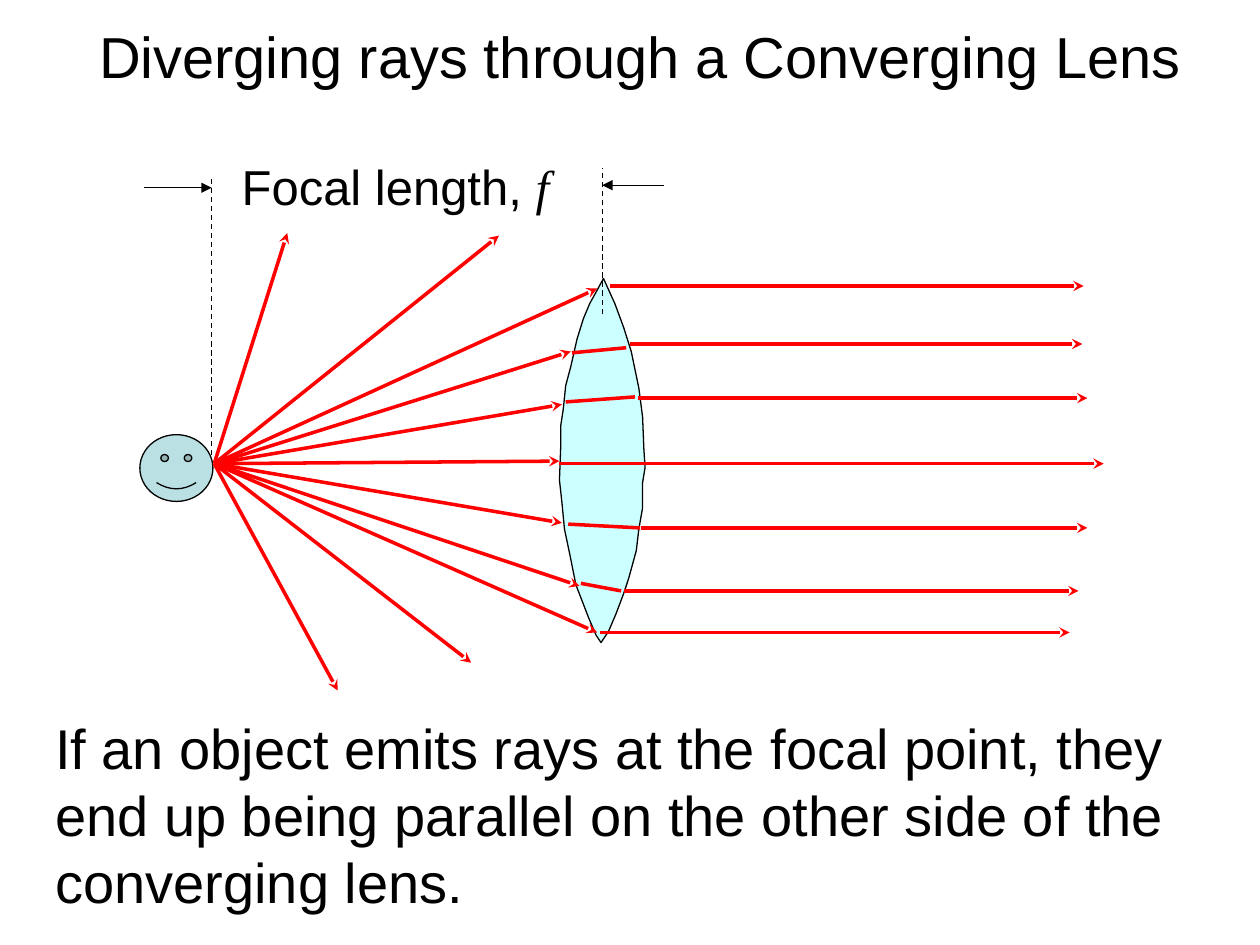
from lxml import etree
from pptx import Presentation
from pptx.dml.color import RGBColor
from pptx.enum.dml import MSO_LINE
from pptx.enum.shapes import MSO_CONNECTOR, MSO_SHAPE
from pptx.enum.text import MSO_ANCHOR, MSO_AUTO_SIZE, PP_ALIGN
from pptx.oxml.ns import qn
from pptx.util import Inches, Pt

STRAIGHT = MSO_CONNECTOR.STRAIGHT
SMILEY = MSO_SHAPE.SMILEY_FACE
DASH = MSO_LINE.DASH
MIDDLE = MSO_ANCHOR.MIDDLE
FIT_SHAPE = MSO_AUTO_SIZE.SHAPE_TO_FIT_TEXT
CENTER, LEFT = PP_ALIGN.CENTER, PP_ALIGN.LEFT
color = RGBColor.from_string
BLACK, RED = "000000", "FF0000"

presentation = Presentation()
presentation.slide_width = Inches(10)
presentation.slide_height = Inches(7.5)
column = presentation.slide_width / 10
row = presentation.slide_height / 7.5
slide = presentation.slides.add_slide(presentation.slide_layouts[6])


def add_line(start, end, line_color=RED, width=2, head=None, dashed=False):
    connector = slide.shapes.add_connector(
        STRAIGHT, int(start[0] * column), int(start[1] * row),
        int(end[0] * column), int(end[1] * row))
    connector.line.color.rgb = color(line_color)
    connector.line.width = Pt(width)
    if dashed:
        connector.line.dash_style = DASH
    if head:
        outline = connector.line._get_or_add_ln()
        etree.SubElement(outline, qn("a:tailEnd"), type=head)
    etree.SubElement(connector._element.spPr, qn("a:effectLst"))


def add_text(left, top, width, height, size, runs, align=LEFT, wrap=True):
    box = slide.shapes.add_textbox(
        int(left * column), int(top * row), int(width * column), int(height * row))
    box.text_frame.word_wrap = wrap
    paragraph = box.text_frame.paragraphs[0]
    paragraph.alignment = align
    paragraph.font.size = Pt(size)
    paragraph.font.color.rgb = color(BLACK)
    for text, font_name, italic in runs:
        run = paragraph.add_run()
        run.text = text
        run.font.name = font_name
        run.font.italic = italic
    return box.text_frame


lens_right = [
    (4.77, 5.1), (4.83, 5.01), (4.89, 4.87), (4.95, 4.71), (4.99, 4.59), (5.05, 4.37),
    (5.07, 4.2), (5.1, 4.03), (5.1, 3.83), (5.12, 3.71), (5.11, 3.56), (5.1, 3.31),
    (5.07, 3.08), (5.01, 2.79), (4.95, 2.6), (4.88, 2.41), (4.83, 2.3), (4.79, 2.21)]
lens_left = [
    (4.73, 2.32), (4.68, 2.41), (4.63, 2.53), (4.58, 2.69), (4.53, 2.91), (4.49, 3.06),
    (4.47, 3.25), (4.45, 3.38), (4.45, 3.55), (4.44, 3.81), (4.46, 3.99), (4.48, 4.2),
    (4.52, 4.39), (4.57, 4.64), (4.62, 4.77), (4.67, 4.9), (4.73, 5.04)]
lens_points = [(int(x * column), int(y * row)) for x, y in lens_right + lens_left]
builder = slide.shapes.build_freeform(*lens_points[0])
builder.add_line_segments(lens_points[1:], close=True)
lens = builder.convert_to_shape()
face = slide.shapes.add_shape(
    SMILEY, int(1.11 * column), int(3.45 * row), int(0.58 * column), int(0.53 * row))
for shape, fill in [(lens, "CCFFFF"), (face, "BBE0E3")]:
    shape.shadow.inherit = False
    shape.fill.solid()
    shape.fill.fore_color.rgb = color(fill)
    shape.line.color.rgb = color(BLACK)
    shape.line.width = Pt(0.75)

title = add_text(0.58, 0, 9, 0.88, 33,
                 [("Diverging rays through a Converging Lens", "Arial", False)], CENTER)
title.vertical_anchor = MIDDLE
label = add_text(1.82, 1.19, 2.65, 0.57, 28,
                 [("Focal length, ", "Arial", False), ("f", "Times New Roman", True)],
                 wrap=False)
caption = add_text(0.34, 5.61, 9.21, 1.72, 32, [(
    "If an object emits rays at the focal point, they end up being parallel "
    "on the other side of the converging lens.", "Arial", False)])
for text_frame in (label, caption):
    text_frame.auto_size = FIT_SHAPE

focus_x, lens_x = 1.68, 4.78
add_line((focus_x, 3.61), (focus_x, 1.39), BLACK, 0.75, dashed=True)
add_line((lens_x, 2.49), (lens_x, 1.33), BLACK, 0.75, dashed=True)
add_line((1.14, 1.49), (focus_x, 1.49), BLACK, 0.75, "triangle")
add_line((5.27, 1.47), (lens_x, 1.47), BLACK, 0.75, "triangle")

focal_point = (1.7, 3.68)
ray_ends = [
    (2.28, 1.85), (3.96, 1.87), (4.74, 2.29), (4.53, 2.79), (4.46, 3.21), (4.44, 3.66),
    (4.46, 4.15), (4.6, 4.65), (4.74, 5.02), (3.74, 5.26), (2.68, 5.48)]
for ray_end in ray_ends:
    add_line(focal_point, ray_end, head="stealth")

rays_inside_lens = [
    ((4.54, 2.8), (4.97, 2.76)), ((4.49, 3.19), (5.04, 3.15)),
    ((4.51, 4.16), (5.08, 4.19)), ((4.61, 4.63), (4.93, 4.69))]
for start, end in rays_inside_lens:
    add_line(start, end)

parallel_rays = [
    (2.27, 4.84, 8.6), (2.73, 5, 8.59), (3.16, 5.06, 8.63), (3.68, 4.44, 8.76),
    (4.19, 5.09, 8.63), (4.69, 4.95, 8.56), (5.02, 4.76, 8.49)]
for y, start_x, end_x in parallel_rays:
    add_line((start_x, y), (end_x, y), head="stealth")

presentation.save("out.pptx")
